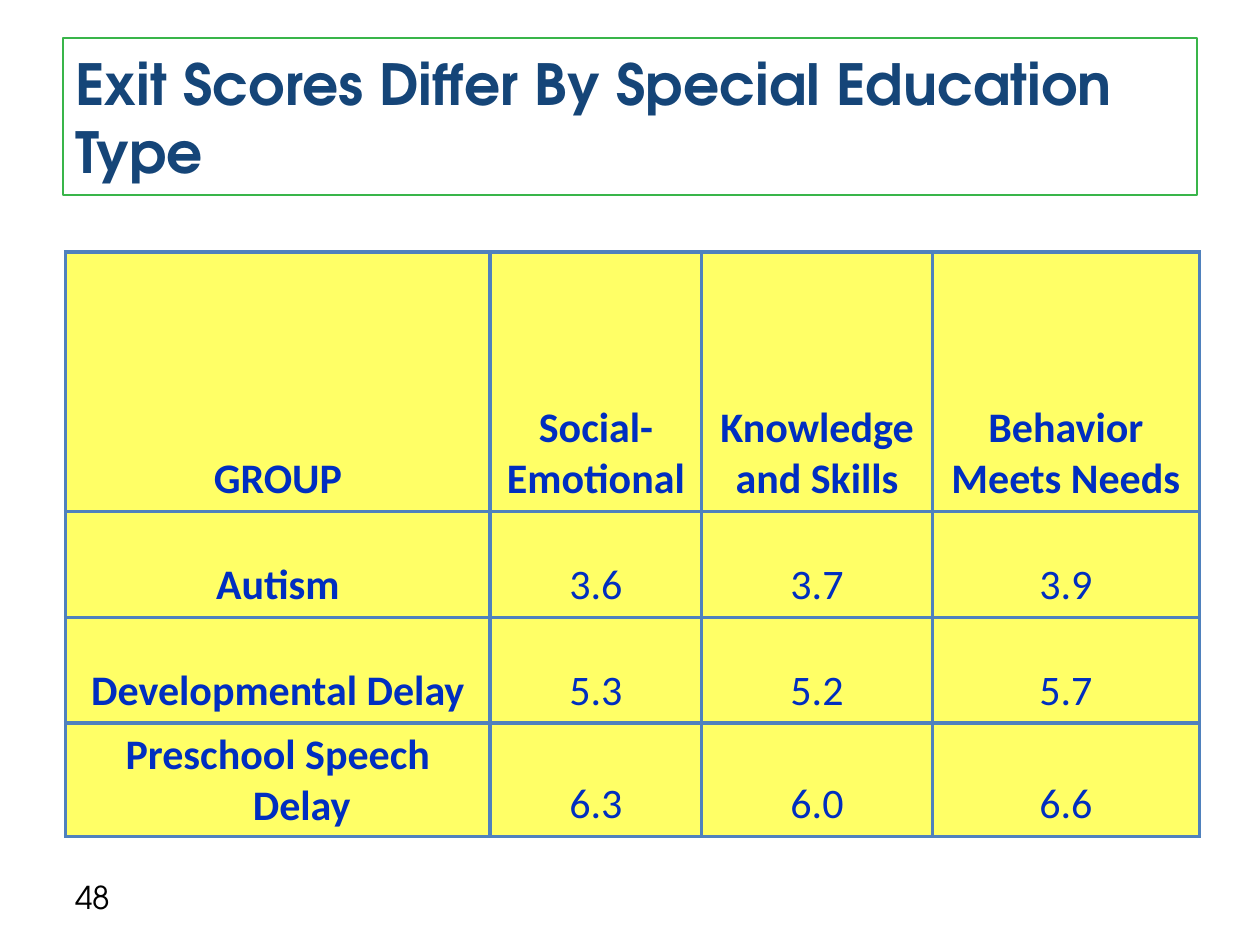
"""Build a slide with a table of exit scores by special education type."""
import dataclasses
import typing

import pptx
import pptx.dml.color
import pptx.enum.shapes
import pptx.enum.text
import pptx.oxml
import pptx.oxml.ns
import pptx.util

Inches = pptx.util.Inches
Pt = pptx.util.Pt
ANCHOR = pptx.enum.text.MSO_ANCHOR
ALIGN = pptx.enum.text.PP_ALIGN

HEADING_FONT = "TeX Gyre Adventor"
TABLE_FONT = "Calibri"
BORDER = "4F81BD"
CELL_FILL = "FFFF66"
CELL_TEXT = "002EC0"
HANGING = 0.38
COLUMNS = [3.37, 1.68, 1.83, 2.12]
ROWS = [2.06, 0.84, 0.84, 0.84]


@dataclasses.dataclass
class TextStyle:
    font: str
    size: float
    color: str
    bold: bool = False
    align: typing.Any = ALIGN.LEFT
    hanging: float = 0


@dataclasses.dataclass
class Box:
    left: float
    top: float
    width: float
    height: float
    text: str
    style: TextStyle
    line: typing.Optional[str] = None


@dataclasses.dataclass
class Cell:
    text: str
    bold: bool = False
    hanging: float = HANGING


@dataclasses.dataclass
class ScoreRow:
    group: str
    scores: typing.List[str]

    def cells(self) -> typing.List[Cell]:
        return [Cell(self.group, bold=True)] + [Cell(score) for score in self.scores]


HEADER = [
    Cell("GROUP", bold=True),
    Cell("Social-Emotional", bold=True, hanging=0),
    Cell("Knowledge\nand Skills", bold=True),
    Cell("Behavior\nMeets Needs", bold=True),
]
SCORES = [
    ScoreRow("Autism", ["3.6", "3.7", "3.9"]),
    ScoreRow("Developmental Delay", ["5.3", "5.2", "5.7"]),
    ScoreRow("Preschool Speech Delay", ["6.3", "6.0", "6.6"]),
]
BOXES = [
    Box(0.5, 0.3, 9, 1.25, "Exit Scores Differ By Special Education Type",
        TextStyle(HEADING_FONT, 32.4, "154578", bold=True), line="39B54A"),
    Box(0.5, 6.92, 2.33, 0.4, "48", TextStyle(HEADING_FONT, 18, "000000")),
]


def rgb(value: str) -> pptx.dml.color.RGBColor:
    return pptx.dml.color.RGBColor.from_string(value)


def write_text(tf: typing.Any, text: str, style: TextStyle) -> None:
    font_format = {"name": style.font, "size": Pt(style.size), "bold": style.bold}
    for i, line in enumerate(text.split("\n")):
        p = tf.add_paragraph() if i else tf.paragraphs[0]
        p.alignment = style.align
        if style.hanging:
            pPr = p._p.get_or_add_pPr()
            pPr.set("marL", str(Inches(style.hanging)))
            pPr.set("indent", str(-Inches(style.hanging)))
        r = p.add_run()
        r.text = line
        for name, value in font_format.items():
            setattr(r.font, name, value)
        r.font.color.rgb = rgb(style.color)


def draw_box(s: typing.Any, box: Box) -> None:
    place = [Inches(v) for v in (box.left, box.top, box.width, box.height)]
    if box.line:
        sp = s.shapes.add_shape(pptx.enum.shapes.MSO_SHAPE.RECTANGLE, *place)
        sp.shadow.inherit = False
        sp.fill.background()
        sp.line.color.rgb = rgb(box.line)
        sp.line.width = Pt(1)
    else:
        sp = s.shapes.add_textbox(*place)
    tf = sp.text_frame
    for name, value in {"word_wrap": True, "vertical_anchor": ANCHOR.MIDDLE}.items():
        setattr(tf, name, value)
    write_text(tf, box.text, box.style)


def add_borders(cell: typing.Any, color: str, width: float) -> None:
    tcPr = cell._tc.get_or_add_tcPr()
    for side in ("lnL", "lnR", "lnT", "lnB"):
        tcPr.append(pptx.oxml.parse_xml(
            f'<a:{side} {pptx.oxml.ns.nsdecls("a")} w="{Pt(width)}">'
            f'<a:solidFill><a:srgbClr val="{color}"/></a:solidFill></a:{side}>'))


def draw_table(s: typing.Any, left: float, top: float,
               rows: typing.List[typing.List[Cell]]) -> None:
    table = s.shapes.add_table(
        len(ROWS), len(COLUMNS), Inches(left), Inches(top),
        Inches(sum(COLUMNS)), Inches(sum(ROWS))).table
    for column, width in zip(table.columns, COLUMNS):
        column.width = Inches(width)
    for row, height, contents in zip(table.rows, ROWS, rows):
        row.height = Inches(height)
        for cell, content in zip(row.cells, contents):
            add_borders(cell, BORDER, 2.25)
            cell.fill.solid()
            cell.fill.fore_color.rgb = rgb(CELL_FILL)
            cell.vertical_anchor = ANCHOR.BOTTOM
            write_text(cell.text_frame, content.text, TextStyle(
                TABLE_FONT, 24, CELL_TEXT, content.bold, ALIGN.CENTER, content.hanging))


def main() -> None:
    prs = pptx.Presentation()
    prs.slide_width = Inches(10)
    prs.slide_height = Inches(7.5)
    s = prs.slides.add_slide(prs.slide_layouts[6])
    for box in BOXES:
        draw_box(s, box)
    draw_table(s, 0.52, 2, [HEADER] + [row.cells() for row in SCORES])
    prs.save("out.pptx")


if __name__ == "__main__":
    main()
